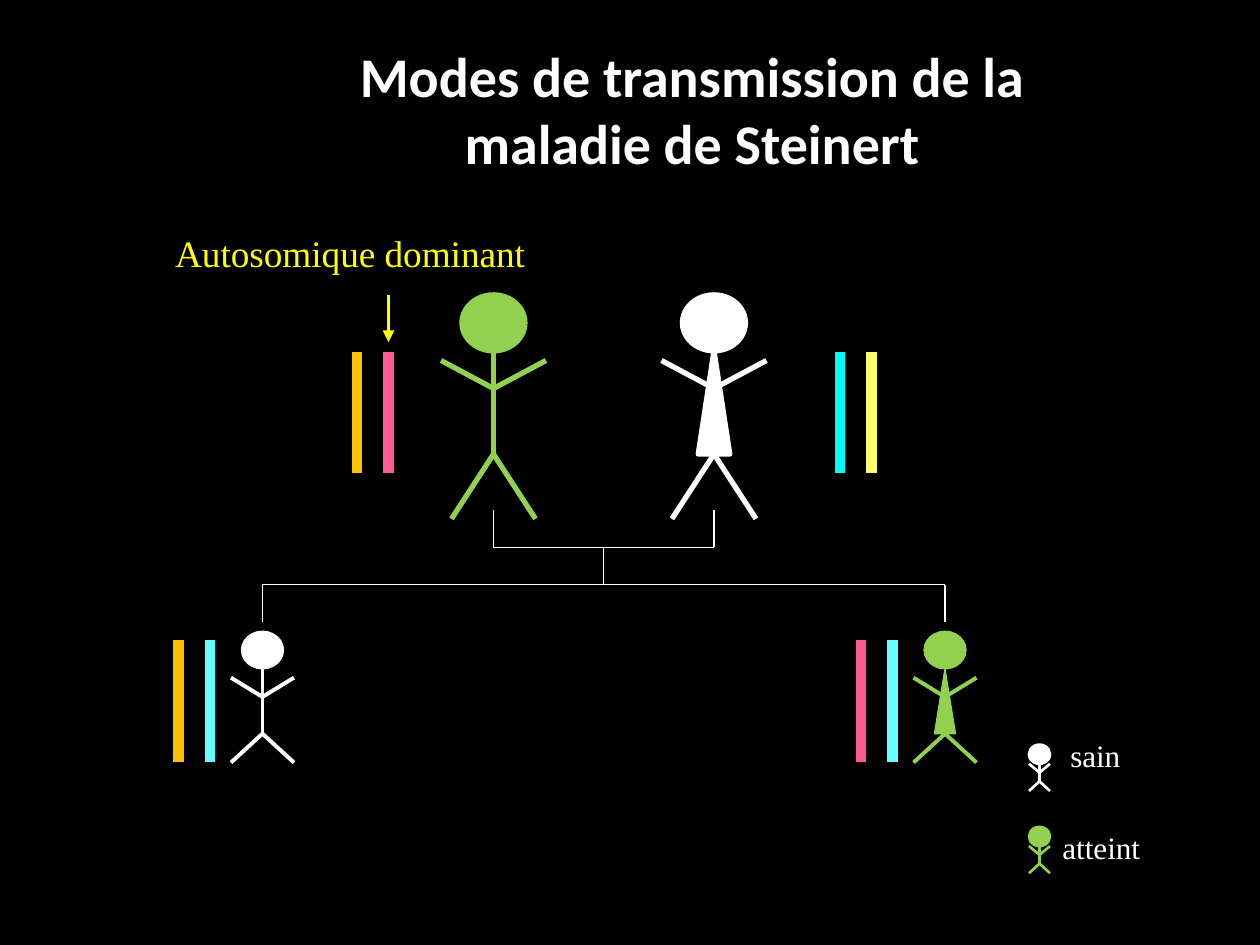
from collections import namedtuple
from lxml.etree import SubElement
from pptx import Presentation
from pptx.dml.color import RGBColor
from pptx.enum.shapes import MSO_CONNECTOR as Wire, MSO_SHAPE as Form
from pptx.enum.text import MSO_AUTO_SIZE as Fit, PP_ALIGN as Align
from pptx.oxml.ns import qn
from pptx.util import Pt

WHITE, GREEN, YELLOW = "FFFFFF", "92D050", "FFFF00"
GOLD, PINK, SKY = "FFC000", "FF5B92", "66FFFF"
SERIF = "Times New Roman"

Build = namedtuple("Build", "width height head_w head_h hand arm hip foot dress edge limb")
ADULT = Build(60, 128, 36, 32, 37.5, 53.5, 91, 24, 18, 3, 3)
CHILD = Build(36, 75, 24, 21.5, 26.5, 37.5, 58.5, 18, 12, 0.75, 2.25)
ICON = Build(12, 26.5, 12, 11, 11, 16, 21, 6, 6, 1.5, 1.5)


def paint(fmt, tone):
    """Give a fill or font colour a hex tone."""
    if hasattr(fmt, "solid"):
        fmt.solid()
        fmt = fmt.fore_color
    fmt.rgb = RGBColor.from_string(tone)


def line(host, x1, y1, x2, y2, tone, width, arrow=False):
    """Draw a straight line, with an arrowhead at its end on request."""
    wire = host.add_connector(Wire.STRAIGHT, Pt(x1), Pt(y1), Pt(x2), Pt(y2))
    paint(wire.line.fill, tone)
    wire.line.width = Pt(width)
    if arrow:
        SubElement(wire.line._get_or_add_ln(), qn("a:tailEnd"), type="triangle")
    SubElement(wire._element.spPr, qn("a:effectLst"))


def solid(host, form, x, y, w, h, tone, width):
    """Place a preset shape in a single tone."""
    shape = host.add_shape(form, Pt(x), Pt(y), Pt(w), Pt(h))
    shape.shadow.inherit = False
    paint(shape.fill, tone)
    paint(shape.line.fill, tone)
    shape.line.width = Pt(width)


def person(host, x, y, build, tone, dress=False):
    """Draw a grouped stick figure in the box whose top left is x, y."""
    group = host.add_group_shape().shapes
    mid = x + build.width / 2
    neck, hip = y + build.head_h, y + build.hip
    solid(group, Form.OVAL, mid - build.head_w / 2, y,
          build.head_w, build.head_h, tone, build.edge)
    if dress:
        solid(group, Form.ISOSCELES_TRIANGLE, mid - build.dress / 2, neck,
              build.dress, hip - neck, tone, build.edge)
    else:
        line(group, mid, neck, mid, hip, tone, build.limb)
    for side in (-1, 1):
        line(group, mid, y + build.arm, mid + side * build.width / 2,
             y + build.hand, tone, build.limb)
        line(group, mid, hip, mid + side * build.foot, y + build.height,
             tone, build.limb)


def genes(host, x, y, tones):
    """Draw a pair of chromosomes side by side from x, y down."""
    for i, tone in enumerate(tones):
        line(host, x + 18 * i, y, x + 18 * i, y + 69.5, tone, 6)


def text(host, x, y, w, h, rows, size, face, tone, bold=False):
    """Write rows of text and alignment in an unwrapped box."""
    box = host.add_textbox(Pt(x), Pt(y), Pt(w), Pt(h))
    frame = box.text_frame
    frame.word_wrap = False
    frame.auto_size = Fit.SHAPE_TO_FIT_TEXT
    for i, (words, align) in enumerate(rows):
        para = frame.add_paragraph() if i else frame.paragraphs[0]
        para.alignment = align
        run = para.add_run()
        run.text = words
        run.font.size, run.font.name, run.font.bold = Pt(size), face, bold
        paint(run.font.color, tone)


def title(host, x, y, w, h):
    """Write the heading."""
    rows = [("Modes de transmission de la", Align.LEFT),
            ("maladie de Steinert", Align.CENTER)]
    text(host, x, y, w, h, rows, 32, "Calibri", WHITE, True)


def parents(host, x, y):
    """Draw both parents, their genes and the label of the faulty one."""
    text(host, x - 111, y - 40.5, 217, 33, [("Autosomique dominant", Align.LEFT)],
         21.3, SERIF, YELLOW)
    line(host, x + 18, y, x + 18, y + 27, YELLOW, 2.25, True)
    genes(host, x, y + 32.5, (GOLD, PINK))
    person(host, x + 48, y, ADULT, GREEN)
    person(host, x + 174, y, ADULT, WHITE, True)
    genes(host, x + 276, y + 32.5, ("00FFFF", "FFFF66"))


def tree(host, x, y, w):
    """Link the parents to the children below them."""
    pa, ma, step = x + 132, x + 258, 21.3
    mid, low, base = (pa + ma) / 2, y + step, y + 2 * step
    for x1, y1, x2, y2 in ((pa, y, pa, low), (ma, y, ma, low), (pa, low, ma, low),
                           (mid, low, mid, base), (x, base, x + w, base),
                           (x, base, x, base + step),
                           (x + w, base, x + w, base + step)):
        line(host, x1, y1, x2, y2, WHITE, 0.75)


def child(host, x, y, tones, tone, dress=False):
    """Draw a child beside its genes."""
    genes(host, x, y + 5.25, tones)
    right = 30 if dress else 30
    person(host, x + right, y, CHILD, tone, dress)


def legend(host, x, y):
    """Explain the two tones."""
    for top, tone, left, drop, w, word in (
            (y, WHITE, 16.5, 8, 43, "sain"), (y + 47, GREEN, 12, 2.5, 60, "atteint")):
        person(host, x, top, ICON, tone)
        text(host, x + left, top - drop, w, 29, [(word, Align.LEFT)],
             17.8, SERIF, WHITE)


def main():
    """Build and save the slide."""
    deck = Presentation()
    deck.slide_width, deck.slide_height = Pt(720), Pt(540)
    slide = deck.slides.add_slide(deck.slide_layouts[6])
    paint(slide.background.fill, "000000")
    host = slide.shapes
    parents(host, 204, 168.5)
    tree(host, 150, 291.5, 390)
    child(host, 102, 360.75, (GOLD, SKY), WHITE)
    child(host, 492, 360.75, (PINK, SKY), GREEN, True)
    legend(host, 588, 425.5)
    title(host, 198.5, 20, 403, 84)
    deck.save("out.pptx")


if __name__ == "__main__":
    main()
